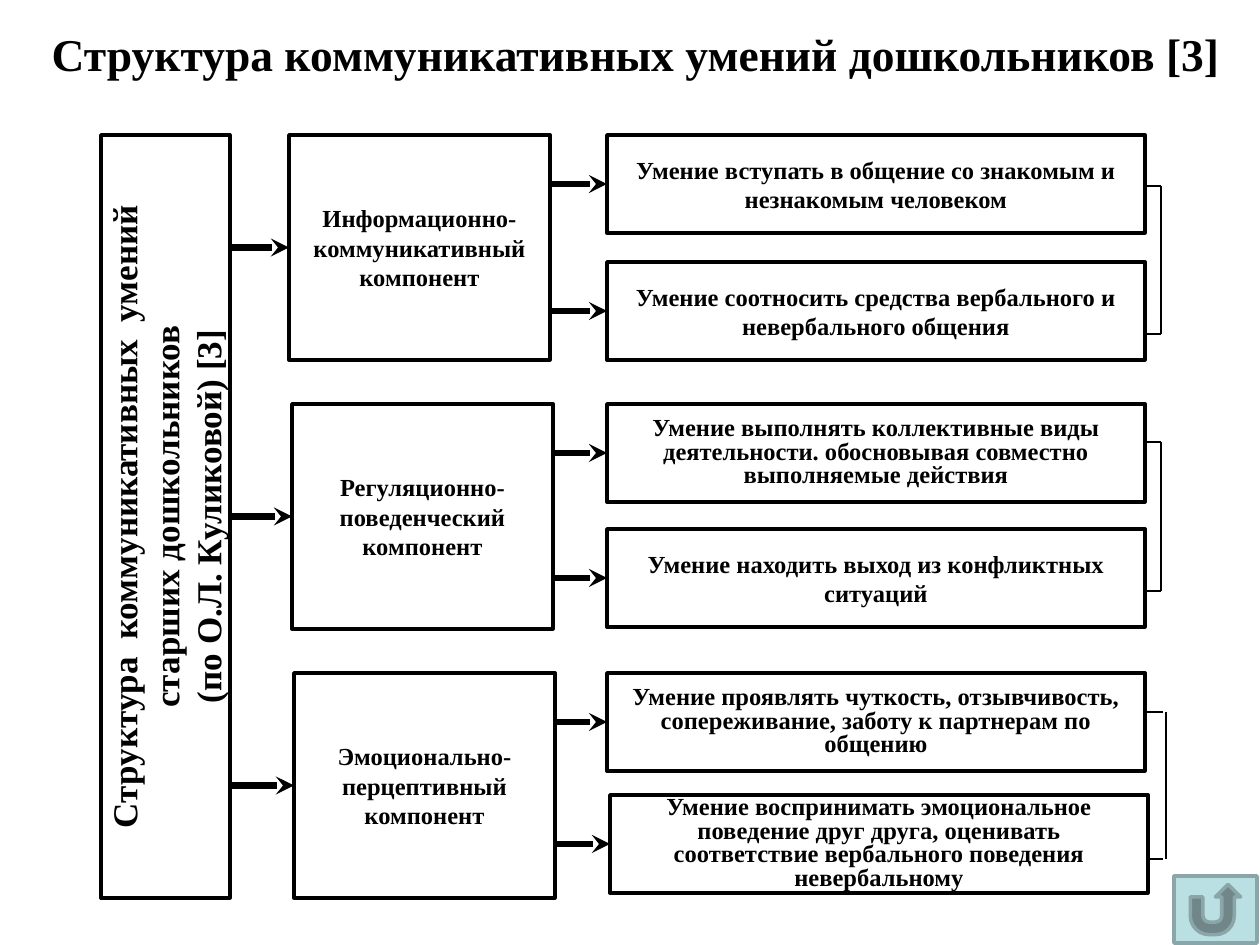
from lxml import etree
from pptx import Presentation
from pptx.dml.color import RGBColor
from pptx.enum.shapes import MSO_CONNECTOR, MSO_SHAPE
from pptx.enum.text import MSO_ANCHOR, MSO_AUTO_SIZE, PP_ALIGN
from pptx.oxml.ns import qn
from pptx.util import Inches, Pt

RECTANGLE = MSO_SHAPE.RECTANGLE
RETURN_BUTTON = MSO_SHAPE.ACTION_BUTTON_RETURN
STRAIGHT = MSO_CONNECTOR.STRAIGHT
MIDDLE = MSO_ANCHOR.MIDDLE
CENTER, LEFT = PP_ALIGN.CENTER, PP_ALIGN.LEFT
LEFT_SIDE, RIGHT_SIDE = 1, 3

FONT = "Times New Roman"
COLORS = {"ink": "000000", "paper": "FFFFFF", "button": "BBE0E3", "button_line": "8AA6A8"}

TITLE = "Структура коммуникативных умений дошкольников [3]"
SIDEBAR = [
    "Структура  коммуникативных  умений",
    "старших дошкольников",
    "(по О.Л. Куликовой) [3]",
]
# Skills: text, left, offset from the top of the component, line spacing
# Bracket: spine x, end of arms x, offsets of both arms
COMPONENTS = [
    {
        "text": "Информационно-коммуникативный компонент",
        "left": 289,
        "skills": [
            ("Умение вступать в общение со знакомым и незнакомым человеком", 607, 0, None),
            ("Умение соотносить средства вербального и невербального общения", 607, 127, None),
        ],
        "bracket": (1161, 1161, (51, 199)),
    },
    {
        "text": "Регуляционно-поведенческий компонент",
        "left": 292,
        "skills": [
            ("Умение выполнять коллективные виды деятельности. обосновывая совместно "
             "выполняемые действия", 607, 0, 0.8),
            ("Умение находить выход из конфликтных ситуаций", 607, 125, None),
        ],
        "bracket": (1161, 1161, (38, 187)),
    },
    {
        "text": "Эмоционально-перцептивный компонент",
        "left": 294,
        "skills": [
            ("Умение проявлять чуткость, отзывчивость, сопереживание, заботу к партнерам "
             "по общению", 607, 0, 0.8),
            ("Умение воспринимать эмоциональное поведение друг друга, оценивать "
             "соответствие вербального поведения невербальному", 610, 122, 0.8),
        ],
        "bracket": (1166, 1163, (39, 186)),
    },
]
TOP, PITCH = 135, 269
COMPONENT_SIZE = (261, 225)
SKILL_SIZE = (538, 98)


def px(value):
    return round(value * Inches(1) / 126)


def color(name):
    return RGBColor.from_string(COLORS[name])


def write(shape, lines, size, align=CENTER, spacing=None):
    frame = shape.text_frame
    frame.word_wrap = True
    frame.auto_size = MSO_AUTO_SIZE.NONE
    frame.vertical_anchor = MIDDLE
    for index, line in enumerate(lines):
        para = frame.add_paragraph() if index else frame.paragraphs[0]
        para.alignment = align
        if spacing:
            para.line_spacing = spacing
        span = para.add_run()
        span.text = line
        span.font.name = FONT
        span.font.size = Pt(size)
        span.font.bold = True
        span.font.color.rgb = color("ink")


def add_box(page, kind, left, top, width, height, fill="paper", line="ink"):
    box = page.shapes.add_shape(kind, px(left), px(top), px(width), px(height))
    box.shadow.inherit = False
    box.fill.solid()
    box.fill.fore_color.rgb = color(fill)
    box.line.color.rgb = color(line)
    box.line.width = Pt(2)
    return box


def add_line(page, start, end, width):
    """Draw a plain line between two points given in EMU."""
    line = page.shapes.add_connector(STRAIGHT, *start, *end)
    line.line.color.rgb = color("ink")
    line.line.width = Pt(width)
    etree.SubElement(line.element.spPr, qn("a:effectLst"))
    return line


def middle(box):
    return box.top + box.height // 2


def right(box):
    return box.left + box.width


def add_arrow(page, source, target):
    """Point level from the right edge of source to the middle of target."""
    y = middle(target)
    arrow = add_line(page, (right(source), y), (target.left, y), 3.5)
    if abs(middle(source) - y) < px(1):
        arrow.begin_connect(source, RIGHT_SIDE)
    arrow.end_connect(target, LEFT_SIDE)
    outline = arrow.element.spPr.find(qn("a:ln"))
    etree.SubElement(outline, qn("a:tailEnd"), type="stealth")


def add_bracket(page, skills, top, spine, arm_end, offsets):
    ends = [px(top + offset) for offset in offsets]
    add_line(page, (px(spine), ends[0]), (px(spine), ends[1]), 1.5)
    for skill, y in zip(skills, ends):
        add_line(page, (right(skill), y), (px(arm_end), y), 1.5)


def main():
    deck = Presentation()
    deck.slide_width, deck.slide_height = Inches(10), Inches(7.5)
    page = deck.slides.add_slide(deck.slide_layouts[5])

    title = page.shapes.title
    title.left, title.top, title.width, title.height = map(px, (39, 6, 1211, 95))
    write(title, [TITLE], 26, LEFT)

    sidebar = add_box(page, RECTANGLE, 101, TOP, 129, 763)
    write(sidebar, SIDEBAR, 20)
    sidebar.element.txBody.find(qn("a:bodyPr")).set("vert", "vert270")

    for row, item in enumerate(COMPONENTS):
        top = TOP + row * PITCH
        component = add_box(page, RECTANGLE, item["left"], top, *COMPONENT_SIZE)
        write(component, [item["text"]], 14)
        add_arrow(page, sidebar, component)
        skills = []
        for text, left, offset, spacing in item["skills"]:
            skill = add_box(page, RECTANGLE, left, top + offset, *SKILL_SIZE)
            write(skill, [text], 14, spacing=spacing)
            add_arrow(page, component, skill)
            skills.append(skill)
        add_bracket(page, skills, top, *item["bracket"])

    add_box(page, RETURN_BUTTON, 1174, 876, 83, 67, "button", "button_line")
    deck.save("out.pptx")


if __name__ == "__main__":
    main()
